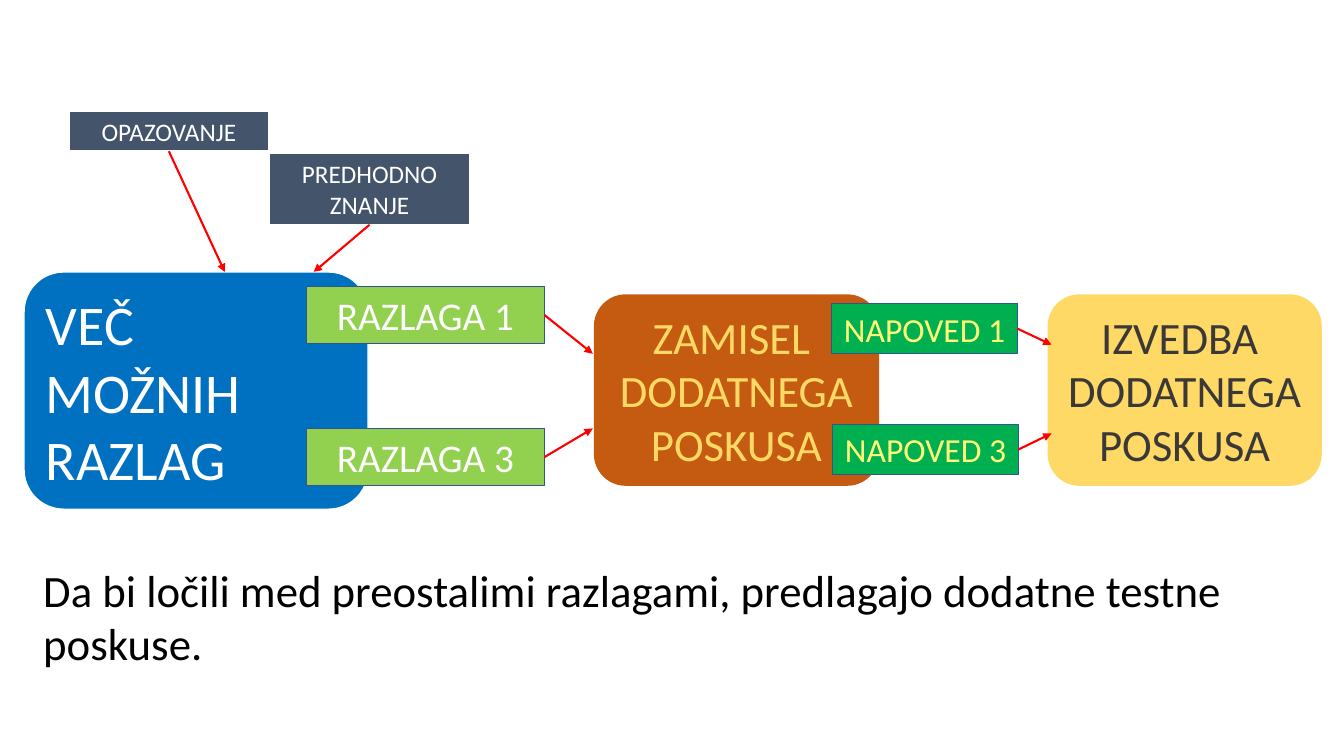
"""Build a slide that leads from explanations to an additional experiment."""
import pptx
import pptx.dml.color
import pptx.enum.shapes
import pptx.enum.text
import pptx.oxml
import pptx.oxml.ns
import pptx.util

Inches = pptx.util.Inches
Pt = pptx.util.Pt
RGBColor = pptx.dml.color.RGBColor
Shape = pptx.enum.shapes.MSO_SHAPE
Align = pptx.enum.text.PP_ALIGN

WHITE = RGBColor(0xFF, 0xFF, 0xFF)
BLACK = RGBColor(0, 0, 0)
SLATE = RGBColor(0x44, 0x54, 0x6A)
BLUE = RGBColor(0x00, 0x70, 0xC0)
NAVY = RGBColor(0x32, 0x54, 0x91)
LIME = RGBColor(0x92, 0xD0, 0x50)
GREEN = RGBColor(0x00, 0xB0, 0x50)
LEMON = RGBColor(0xFF, 0xFD, 0x78)
ORANGE = RGBColor(0xC5, 0x5A, 0x11)
GOLD = RGBColor(0xFF, 0xD9, 0x66)
CHARCOAL = RGBColor(0x3B, 0x38, 0x38)
RED = RGBColor(0xFF, 0, 0)


def write_text(shape, lines, size, color, align):
    """Write the lines as equally formatted paragraphs."""
    frame = shape.text_frame
    frame.word_wrap = True
    frame.text = "\n".join(lines)
    frame.auto_size = pptx.enum.text.MSO_AUTO_SIZE.SHAPE_TO_FIT_TEXT
    for paragraph in frame.paragraphs:
        paragraph.alignment = align
        paragraph.font.name = "Calibri"
        paragraph.font.size = Pt(size)
        paragraph.font.color.rgb = color


def add_block(slide, kind, box, fill, lines, size, color, outline=None, weight=1, align=Align.CENTER):
    """Add a filled shape with text and an optional outline."""
    shape = slide.shapes.add_shape(kind, *map(Inches, box))
    shape.shadow.inherit = False
    shape.fill.solid()
    shape.fill.fore_color.rgb = fill
    if outline is None:
        shape.line.fill.background()
    else:
        shape.line.color.rgb = outline
        shape.line.width = Pt(weight)
    write_text(shape, lines, size, color, align)
    return shape


def add_arrow(slide, source, site, end):
    """Draw a red arrow from a connection site of the source to a point."""
    arrow = slide.shapes.add_connector(
        pptx.enum.shapes.MSO_CONNECTOR.STRAIGHT, 0, 0, *map(Inches, end))
    arrow.begin_connect(source, site)
    arrow.line.color.rgb = RED
    arrow.line.width = Pt(1.5)
    head = pptx.oxml.parse_xml(
        f'<a:tailEnd {pptx.oxml.ns.nsdecls("a")} type="triangle"/>')
    arrow.line._get_or_add_ln().append(head)
    effects = pptx.oxml.parse_xml(f'<a:effectLst {pptx.oxml.ns.nsdecls("a")}/>')
    arrow._element.spPr.append(effects)


def add_causes(slide, box):
    """Add the two inputs and their arrows down to the bottom of the box."""
    left, top, width, height = box
    causes = [
        ("OPAZOVANJE", 0, 0, 0.4, 1.55),
        ("PREDHODNO ZNANJE", width / 2, 0.42, 0.71, 2.43),
    ]
    for text, across, down, label_height, target in causes:
        label = add_block(slide, Shape.RECTANGLE, (left + across, top + down, width / 2, label_height),
                          SLATE, [text], 18, WHITE, WHITE, 1.5)
        add_arrow(slide, label, 2, (left + target, top + height))


def add_explanations(slide, box):
    """Add the explanations block with its two labels and arrows."""
    left, top, width, height = box
    add_block(slide, Shape.ROUNDED_RECTANGLE, box, BLUE, ["VEČ", "MOŽNIH", "RAZLAG"],
              40, WHITE, WHITE, 0.75, Align.LEFT)
    for text, down, target in [("RAZLAGA 1", 0.14, 0.81), ("RAZLAGA 3", 1.55, 1.55)]:
        label = add_block(slide, Shape.RECTANGLE, (left + 2.8, top + down, 2.36, 0.57),
                          LIME, [text], 28, WHITE, NAVY)
        add_arrow(slide, label, 3, (left + 5.64, top + target))


def add_experiment(slide, box, first_line, fill, color):
    """Add a rounded block for one stage of the additional experiment."""
    add_block(slide, Shape.ROUNDED_RECTANGLE, box, fill,
              [first_line, "DODATNEGA POSKUSA"], 32, color)


def add_predictions(slide, box):
    """Add the two predictions at the left of the box and arrows to its right edge."""
    left, top, width, height = box
    predictions = [("NAPOVED 1", 0, 0, 0.41), ("NAPOVED 3", 0.01, height - 0.5, 1.29)]
    for text, across, down, target in predictions:
        label = add_block(slide, Shape.RECTANGLE, (left + across, top + down, 1.84, 0.5),
                          GREEN, [text], 24, LEMON, NAVY)
        add_arrow(slide, label, 3, (left + width, top + target))


def add_conclusion(slide, box):
    """Add the sentence below the diagram."""
    text_box = slide.shapes.add_textbox(*map(Inches, box))
    sentence = "Da bi ločili med preostalimi razlagami, predlagajo dodatne testne poskuse."
    write_text(text_box, [sentence], 32, BLACK, Align.LEFT)


def main():
    """Create the presentation and save it."""
    presentation = pptx.Presentation()
    presentation.slide_width = Inches(13.33)
    presentation.slide_height = Inches(7.5)
    slide = presentation.slides.add_slide(presentation.slide_layouts[6])
    add_causes(slide, (0.68, 1.1, 3.98, 1.6))
    add_explanations(slide, (0.24, 2.7, 3.41, 2.35))
    add_experiment(slide, (5.89, 2.92, 2.83, 1.9), "ZAMISEL ", ORANGE, GOLD)
    add_experiment(slide, (10.39, 2.92, 2.72, 1.9), "IZVEDBA ", GOLD, CHARCOAL)
    add_predictions(slide, (8.25, 3.01, 2.18, 1.7))
    add_conclusion(slide, (0.33, 5.53, 12.69, 1.18))
    presentation.save("out.pptx")


if __name__ == "__main__":
    main()
